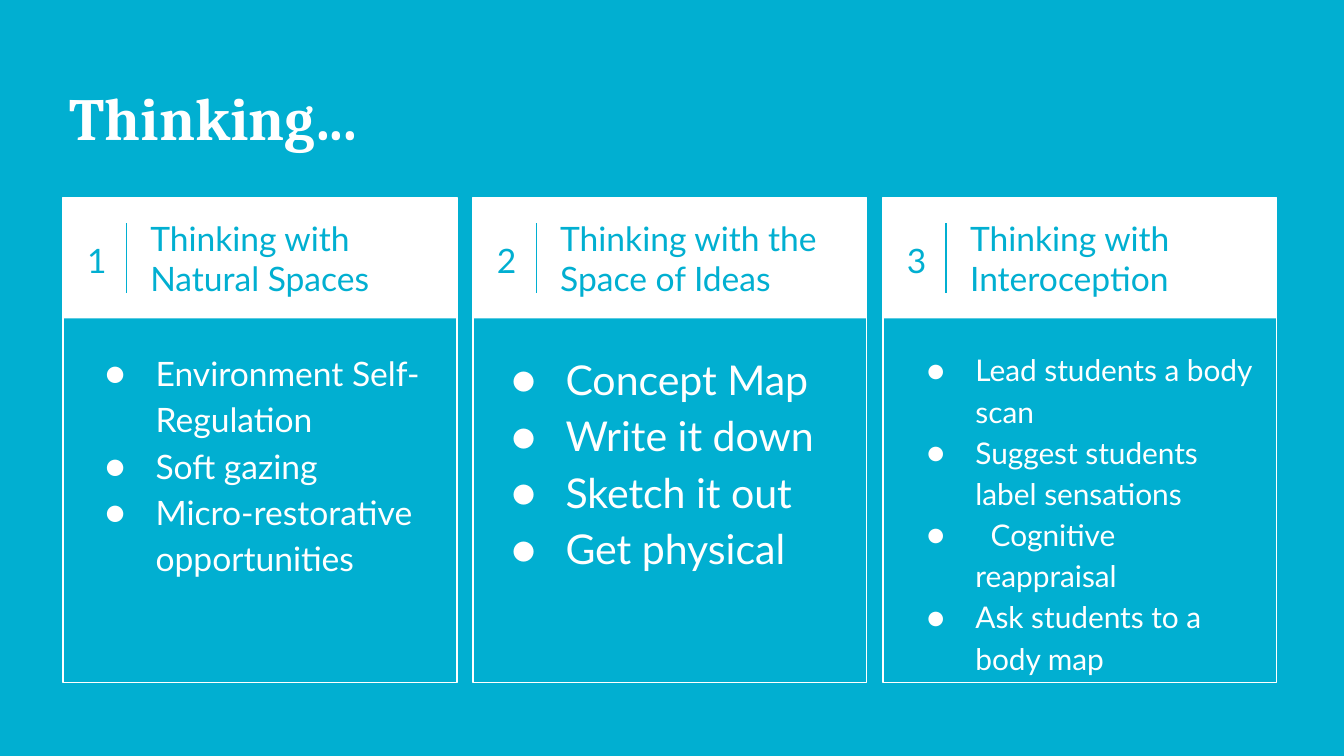
"""Build a slide with three numbered cards about ways of thinking."""
from lxml import etree
from pptx import Presentation
from pptx.dml.color import RGBColor
from pptx.enum import shapes, text
from pptx.oxml import ns
from pptx.util import Inches, Pt

TITLE = "Thinking..."
CARDS = [
    ("Thinking with Natural Spaces", 18,
     ["Environment Self-Regulation", "Soft gazing", "Micro-restorative opportunities"]),
    ("Thinking with the Space of Ideas", 22,
     ["Concept Map", "Write it down", "Sketch it out", "Get physical"]),
    ("Thinking with Interoception", 16,
     ["Lead students a body scan", "Suggest students label sensations",
      "  Cognitive reappraisal", "Ask students to a body map"]),
]
BLUE, WHITE = "01AFD1", "FFFFFF"
SLIDE_WIDTH = 10
CARD_LEFT, CARD_TOP, CARD_STEP = 0.47, 1.47, 3.05
CARD_WIDTH, CARD_HEIGHT, HEADER_HEIGHT = 2.93, 3.61, 0.9


def color(value):
    return RGBColor.from_string(value)


def apply(target, values):
    for name, value in values.items():
        setattr(target, name, value)


def write(shape, lines, font, anchor=text.MSO_ANCHOR.TOP, **paragraph_format):
    frame = shape.text_frame
    margins = dict.fromkeys(
        ("margin_left", "margin_top", "margin_right", "margin_bottom"), Inches(0.1))
    apply(frame, {"word_wrap": True, "auto_size": text.MSO_AUTO_SIZE.NONE,
                  "vertical_anchor": anchor, **margins})
    frame.text = "\n".join(lines)
    for paragraph in frame.paragraphs:
        apply(paragraph, {"alignment": text.PP_ALIGN.LEFT, **paragraph_format})
        run_font = paragraph.runs[0].font
        apply(run_font, {"name": font["name"], "size": Pt(font["size"]),
                         "bold": font.get("bold", False)})
        run_font.color.rgb = color(font["color"])


def add_text(slide, box, lines, font, **options):
    shape = slide.shapes.add_textbox(*map(Inches, box))
    write(shape, lines, font, **options)
    return shape


def add_bullets(shape, size):
    for paragraph in shape.text_frame.paragraphs:
        properties = paragraph._p.get_or_add_pPr()
        properties.set("marL", str(Inches(0.5)))
        properties.set("indent", str(-Inches(0.25 + size / 144)))
        bullet_color = etree.SubElement(properties, ns.qn("a:buClr"))
        etree.SubElement(bullet_color, ns.qn("a:srgbClr"), val=WHITE)
        etree.SubElement(properties, ns.qn("a:buFont"), typeface="Lato")
        etree.SubElement(properties, ns.qn("a:buChar"), char="●")


def add_rectangle(slide, box, fill=None, line=None):
    shape = slide.shapes.add_shape(shapes.MSO_SHAPE.RECTANGLE, *map(Inches, box))
    shape.shadow.inherit = False
    for part, value in ((shape.fill, fill), (shape.line.fill, line)):
        if value:
            part.solid()
            part.fore_color.rgb = color(value)
        else:
            part.background()
    if line:
        shape.line.width = Pt(0.75)


def add_divider(slide, x, top, bottom):
    divider = slide.shapes.add_connector(
        shapes.MSO_CONNECTOR.STRAIGHT, *map(Inches, (x, top, x, bottom)))
    divider.line.color.rgb = color(BLUE)
    divider.line.width = Pt(0.75)
    etree.SubElement(divider._element.spPr, ns.qn("a:effectLst"))


def add_card(slide, index, heading, size, items):
    left = CARD_LEFT + index * CARD_STEP
    header_font = {"name": "Lato", "size": 18, "color": BLUE}
    middle = text.MSO_ANCHOR.MIDDLE
    add_rectangle(slide, (left, CARD_TOP, CARD_WIDTH, CARD_HEIGHT), line=WHITE)
    add_rectangle(slide, (left, CARD_TOP, CARD_WIDTH, HEADER_HEIGHT), fill=WHITE)
    add_text(slide, (left + 0.06, 1.46, 0.38, HEADER_HEIGHT), [str(index + 1)],
             header_font, anchor=middle, alignment=text.PP_ALIGN.CENTER, line_spacing=1.15)
    add_divider(slide, left + 0.47, 1.66, 2.18)
    add_text(slide, (left + 0.55, CARD_TOP, 2.3, HEADER_HEIGHT), [heading],
             header_font, anchor=middle)
    body = add_text(slide, (left + 0.09, 2.48, 2.77, 2.6), items,
                    {"name": "Lato", "size": size, "color": WHITE}, line_spacing=1.15)
    add_bullets(body, size)


def main():
    presentation = Presentation()
    apply(presentation, {"slide_width": Inches(SLIDE_WIDTH),
                         "slide_height": Inches(SLIDE_WIDTH * 9 / 16)})
    slide = presentation.slides.add_slide(presentation.slide_layouts.get_by_name("Title Only"))
    background = slide.background.fill
    background.solid()
    background.fore_color.rgb = color(BLUE)
    title = slide.shapes.title
    apply(title, {"left": Inches(0.42), "top": Inches(0.5),
                  "width": Inches(9.15), "height": Inches(0.75)})
    write(title, [TITLE], {"name": "Cambria", "size": 32, "color": WHITE, "bold": True})
    for index, card in enumerate(CARDS):
        add_card(slide, index, *card)
    presentation.save("out.pptx")


if __name__ == "__main__":
    main()
